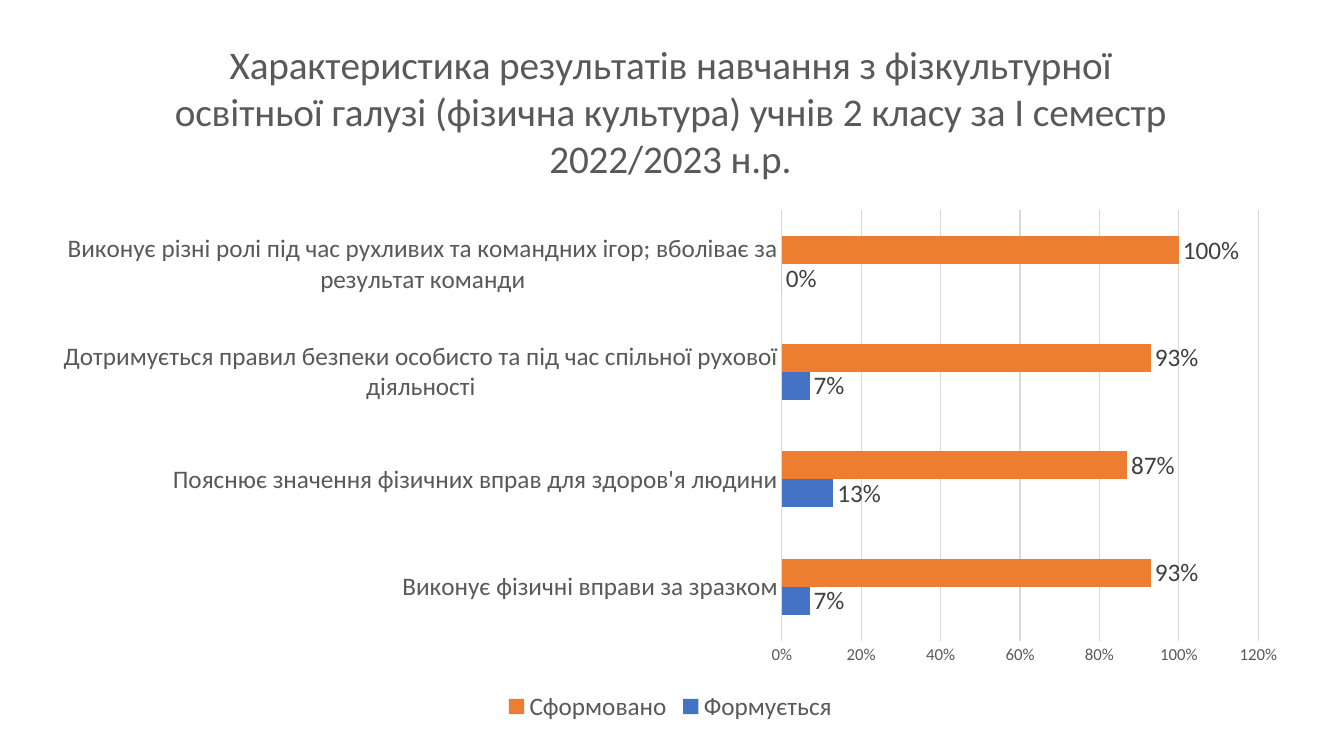
from pptx import Presentation
from pptx.chart.data import CategoryChartData
from pptx.dml.color import RGBColor
from pptx.enum.chart import XL_CHART_TYPE, XL_LABEL_POSITION, XL_LEGEND_POSITION, XL_TICK_MARK
from pptx.util import Pt

BAR_CLUSTERED = XL_CHART_TYPE.BAR_CLUSTERED
OUTSIDE_END = XL_LABEL_POSITION.OUTSIDE_END
BOTTOM = XL_LEGEND_POSITION.BOTTOM
NO_TICK = XL_TICK_MARK.NONE

FONT = "Calibri"
GREY, DARK_GREY, LIGHT_GREY = "595959", "404040", "D9D9D9"
TITLE = ("Характеристика результатів навчання з фізкультурної освітньої галузі "
         "(фізична культура) учнів 2 класу за І семестр 2022/2023 н.р.")
SKILLS = [
    "Виконує фізичні вправи за зразком",
    "Пояснює значення фізичних вправ для здоров'я людини",
    "Дотримується правил безпеки особисто та під час спільної рухової діяльності",
    "Виконує різні ролі під час рухливих та командних ігор; вболіває за результат команди",
]
SERIES = [
    ("Формується", "4472C4", (0.07, 0.13, 0.07, 0)),
    ("Сформовано", "ED7D31", (0.93, 0.87, 0.93, 1)),
]


def rgb(value):
    return RGBColor.from_string(value)


def set_font(font, size, color):
    font.name = FONT
    font.size = Pt(size)
    font.bold = False
    font.color.rgb = rgb(color)


def set_line(line, color):
    line.color.rgb = rgb(color)
    line.width = Pt(0.75)


def style_title(chart):
    chart.has_title = True
    frame = chart.chart_title.text_frame
    frame.text = TITLE
    set_font(frame.paragraphs[0].font, 28, GREY)
    chart.chart_title.include_in_layout = False


def style_axes(chart):
    for axis, size in ((chart.category_axis, 18), (chart.value_axis, 12)):
        axis.major_tick_mark = axis.minor_tick_mark = NO_TICK
        set_font(axis.tick_labels.font, size, GREY)
    set_line(chart.category_axis.format.line, LIGHT_GREY)
    values = chart.value_axis
    values.format.line.fill.background()
    values.has_major_gridlines = True
    set_line(values.major_gridlines.format.line, LIGHT_GREY)
    values.minimum_scale, values.maximum_scale, values.major_unit = 0, 1.2, 0.2
    values.tick_labels.number_format = "0%"
    values.tick_labels.number_format_is_linked = False


def style_bars(chart):
    plot = chart.plots[0]
    plot.gap_width = 182
    plot.overlap = 0
    plot.vary_by_categories = False
    for series, (_, color, _) in zip(plot.series, SERIES):
        series.format.fill.solid()
        series.format.fill.fore_color.rgb = rgb(color)
        labels = series.data_labels
        labels.show_value = True
        labels.position = OUTSIDE_END
        labels.number_format = "0%"
        labels.number_format_is_linked = False
        set_font(labels.font, 18, DARK_GREY)


def style_legend(chart):
    chart.has_legend = True
    chart.legend.position = BOTTOM
    chart.legend.include_in_layout = False
    set_font(chart.legend.font, 18, GREY)


def add_results_chart(page, left, top, width, height):
    data = CategoryChartData(number_format="0%")
    data.categories = SKILLS
    for name, _, values in SERIES:
        data.add_series(name, values)
    chart = page.shapes.add_chart(BAR_CLUSTERED, Pt(left), Pt(top),
                                  Pt(width), Pt(height), data).chart
    set_font(chart.font, 10, "000000")
    style_title(chart)
    style_axes(chart)
    style_bars(chart)
    style_legend(chart)


def main():
    deck = Presentation()
    deck.slide_width, deck.slide_height = Pt(960), Pt(540)
    page = deck.slides.add_slide(deck.slide_layouts[6])
    add_results_chart(page, 27.4, 8, 902.9, 511.2)
    deck.save("out.pptx")


if __name__ == "__main__":
    main()
